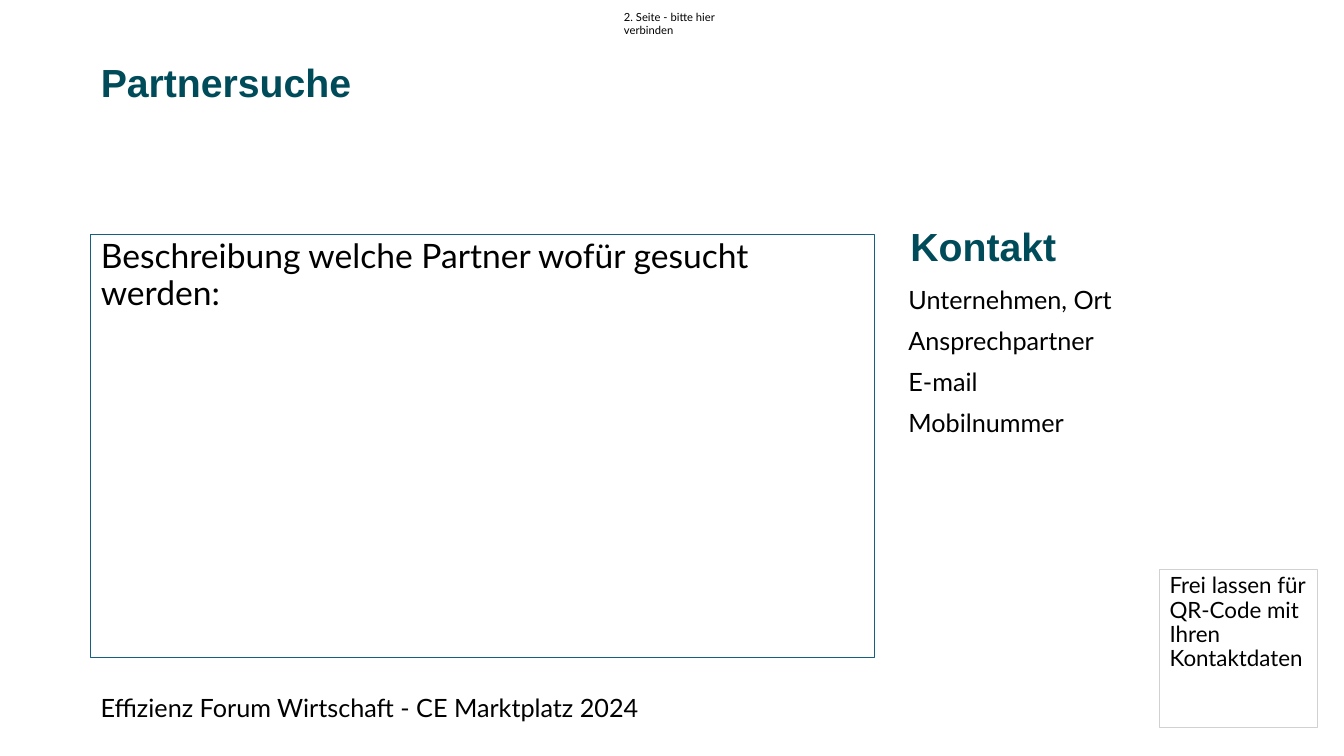
from pptx import Presentation
from pptx.dml.color import RGBColor
from pptx.enum.text import MSO_ANCHOR, MSO_AUTO_SIZE, PP_ALIGN
from pptx.oxml.ns import qn
from pptx.util import Inches, Pt

TOP, MIDDLE = MSO_ANCHOR.TOP, MSO_ANCHOR.MIDDLE
LEFT = PP_ALIGN.LEFT
NO_AUTOFIT = MSO_AUTO_SIZE.NONE
COMPARISON_LAYOUT = 3 + 1

COLORS = {
    "heading": "004B59",
    "text": "000000",
    "frame": "156082",
    "code_frame": "D1D1D1",
}


def color(name):
    return RGBColor.from_string(COLORS[name])


def place(shape, left, top, width, height):
    shape.left, shape.top = Inches(left), Inches(top)
    shape.width, shape.height = Inches(width), Inches(height)


def write(shape, lines, size, font="Lato", color_name="text", bold=False,
          anchor=TOP, line_spacing=0.9):
    """Fill a shape with unbulleted, left-aligned paragraphs."""
    text_frame = shape.text_frame
    text_frame.text = "\n".join(lines)
    text_frame.word_wrap = True
    text_frame.auto_size = NO_AUTOFIT
    text_frame.vertical_anchor = anchor
    for index, paragraph in enumerate(text_frame.paragraphs):
        paragraph.alignment = LEFT
        paragraph.line_spacing = line_spacing
        paragraph.space_before = Pt(10 if index else 0)
        properties = paragraph._p.get_or_add_pPr()
        properties.set("marL", "0")
        properties.set("indent", "0")
        properties.append(properties.makeelement(qn("a:buNone"), {}))
        for run in paragraph.runs:
            run.font.name = font
            run.font.size = Pt(size)
            run.font.bold = bold
            run.font.color.rgb = color(color_name)


def add_heading(placeholder, text, box):
    place(placeholder, *box)
    write(placeholder, [text], 28, "Arial", "heading", True, MIDDLE)


def add_body(placeholder, lines, size, box, frame=None):
    place(placeholder, *box)
    write(placeholder, lines, size)
    if frame:
        placeholder.line.color.rgb = color(frame)
        placeholder.line.width = Pt(0.75)


def add_label(slide, text, size, box):
    label = slide.shapes.add_textbox(*(Inches(value) for value in box))
    write(label, [text], size, line_spacing=1.0)


def main():
    presentation = Presentation()
    presentation.slide_width = Inches(13.33)
    presentation.slide_height = Inches(7.5)
    layout = presentation.slide_layouts[COMPARISON_LAYOUT]
    slide = presentation.slides.add_slide(layout)
    title, contact_heading, description, code_area, contact = slide.placeholders

    add_heading(title, "Partnersuche", (0.9, 0.45, 3.15, 0.79))
    add_heading(contact_heading, "Kontakt", (8.93, 2.07, 2.36, 0.79))
    add_label(slide, "2. Seite - bitte hier verbinden", 8,
              (6.09, 0.05, 1.58, 0.24))
    add_body(description, ["Beschreibung welche Partner wofür gesucht werden:"],
             24, (0.9, 2.33, 7.77, 4.19), "frame")
    add_label(slide, "Effizienz Forum Wirtschaft - CE Marktplatz 2024", 18,
              (0.9, 6.82, 7.77, 0.4))
    add_body(contact,
             ["Unternehmen, Ort", "Ansprechpartner", "E-mail", "Mobilnummer"],
             18, (8.91, 2.8, 4.17, 2.64))
    add_body(code_area, ["Frei lassen für QR-Code mit Ihren Kontaktdaten"],
             16, (11.5, 5.65, 1.57, 1.57), "code_frame")
    presentation.save("out.pptx")


if __name__ == "__main__":
    main()
